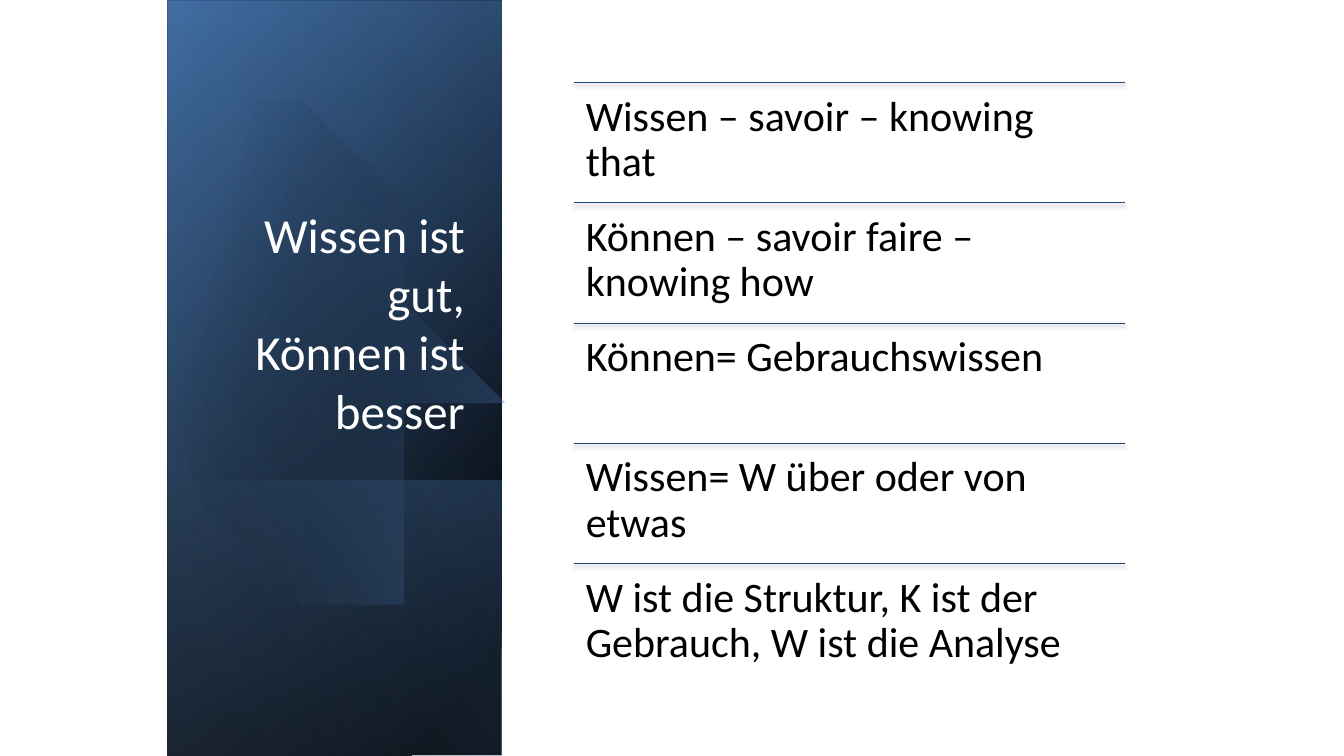
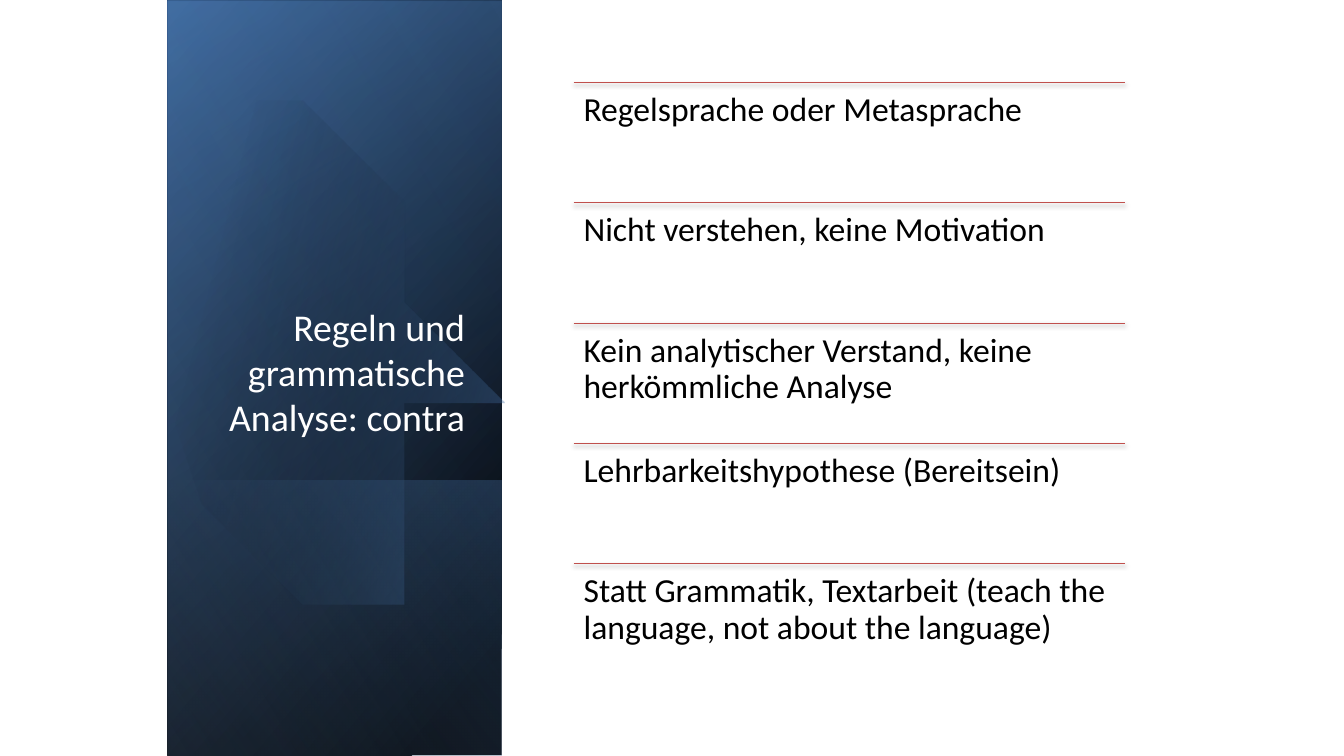
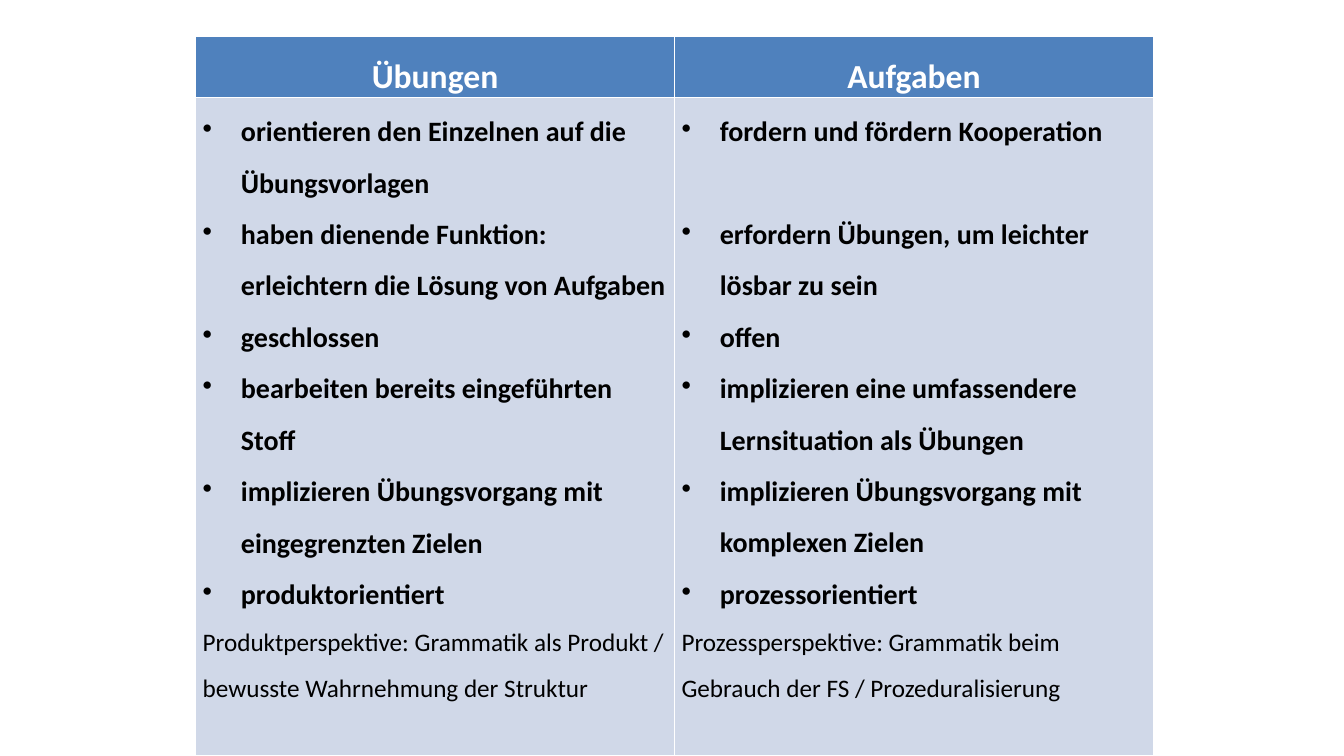
from pptx import Presentation
from pptx.dml.color import RGBColor
from pptx.enum.shapes import MSO_CONNECTOR, MSO_SHAPE
from pptx.enum.text import MSO_ANCHOR, PP_ALIGN
from pptx.oxml.ns import qn
from pptx.oxml.xmlchemy import OxmlElement
from pptx.util import Inches, Pt

FONT = "Calibri"
COLORS = {
    "black": "000000", "white": "FFFFFF", "navy": "376092", "blue": "4F81BD",
    "sky": "95B3D7", "rule_blue": "1F497D", "rule_red": "C0504D", "cell": "D0D8E8",
}

# Gradient: two (position %, colour, opacity %) stops and a clockwise angle.
BASE = ((8, "black", 100), (100, "navy", 100), 50)
GLOW = ((0, "black", 0), (99, "blue", 46), 30)
FOOT = ((2, "blue", 29), (100, "black", 30), 130)
BLOB = ((29, "black", 0), (100, "blue", 43), 14)
SHEEN = ((0, "black", 0), (99, "sky", 11), 120)

BLOB_START = (2.63, 1.14)
BLOB_SEGMENTS = [  # three points make a curve, one point a straight line
    [(3.38, 1.22), (4.11, 1.92), (4.39, 2.9)],
    [(4.74, 4.12), (4.29, 5.31), (3.38, 5.57)],
    [(2.81, 5.74), (2.2, 5.5), (1.73, 5)],
    [(1.63, 4.88)],
    [(1.41, 1.66)],
    [(1.52, 1.54)],
    [(1.69, 1.37), (1.88, 1.25), (2.11, 1.18)],
    [(2.28, 1.13), (2.46, 1.12), (2.63, 1.14)],
]
CURVE_STEPS = 16

LIST_LEFT, LIST_TOP, LIST_WIDTH, LIST_PITCH = 5.69, 0.82, 5.47, 1.193

KNOWLEDGE = [
    "Wissen – savoir – knowing that",
    "Können – savoir faire – knowing how",
    "Können= Gebrauchswissen",
    "Wissen= W über oder von etwas",
    "W ist die Struktur, K ist der Gebrauch, W ist die Analyse",
]
CONTRA = [
    "Regelsprache oder Metasprache",
    "Nicht verstehen, keine Motivation",
    "Kein analytischer Verstand, keine herkömmliche Analyse",
    "Lehrbarkeitshypothese (Bereitsein)",
    "Statt Grammatik, Textarbeit (teach the language, not about the language)",
]
COMPARISON = [  # heading, bullets, closing line, gap after first bullet (pt)
    ("Übungen", [
        "orientieren den Einzelnen auf die Übungsvorlagen",
        "haben dienende Funktion: erleichtern die Lösung von Aufgaben",
        "geschlossen",
        "bearbeiten bereits eingeführten Stoff",
        "implizieren Übungsvorgang mit eingegrenzten Zielen",
        "produktorientiert",
    ], "Produktperspektive: Grammatik als Produkt / bewusste Wahrnehmung der Struktur", 0),
    ("Aufgaben", [
        "fordern und fördern Kooperation",
        "erfordern Übungen, um leichter lösbar zu sein",
        "offen",
        "implizieren eine umfassendere Lernsituation als Übungen",
        "implizieren Übungsvorgang mit komplexen Zielen",
        "prozessorientiert",
    ], "Prozessperspektive: Grammatik beim Gebrauch der FS / Prozeduralisierung", 36.6),
]


def rgb(name):
    return RGBColor.from_string(COLORS[name])


def add_child(parent, tag, **attributes):
    child = OxmlElement(tag)
    for key, value in attributes.items():
        child.set(key, str(value))
    parent.append(child)
    return child


def style(para, size, color, bold=False):
    font = para.font
    font.name, font.size, font.bold = FONT, Pt(size), bold
    font.color.rgb = rgb(color)


def paint(shape, gradient):
    """Give a shape a see-through gradient, without line or shadow."""
    *stops, angle = gradient
    shape.shadow.inherit = False
    shape.line.fill.background()
    shape.fill.gradient()
    shape.fill.gradient_angle = 360 - angle
    for stop, (position, color, _) in zip(shape.fill.gradient_stops, stops):
        stop.position = position / 100
        stop.color.rgb = rgb(color)
    for element, (_, _, opacity) in zip(shape._element.iter(qn("a:srgbClr")), stops):
        add_child(element, "a:alpha", val=opacity * 1000)


def add_band(page, left, top, width, height, gradient):
    """Add a rectangle that is mirrored and turned by a quarter."""
    band = page.shapes.add_shape(
        MSO_SHAPE.RECTANGLE, Inches(left), Inches(top), Inches(width), Inches(height))
    band.rotation = 90
    band._element.spPr.find(qn("a:xfrm")).set("flipH", "1")
    paint(band, gradient)


def curve_points(start, first, second, end):
    """Points along a cubic curve, without its start."""
    for step in range(1, CURVE_STEPS + 1):
        t = step / CURVE_STEPS
        weights = ((1 - t) ** 3, 3 * t * (1 - t) ** 2, 3 * t * t * (1 - t), t ** 3)
        corners = (start, first, second, end)
        yield tuple(sum(w * c[axis] for w, c in zip(weights, corners)) for axis in (0, 1))


def add_blob(page):
    points = [BLOB_START]
    for segment in BLOB_SEGMENTS:
        points += curve_points(points[-1], *segment) if len(segment) == 3 else segment
    builder = page.shapes.build_freeform(*points[0], scale=Inches(1))
    builder.add_line_segments(points[1:], close=True)
    paint(builder.convert_to_shape(), BLOB)


def add_text(page, text, box, size, color, inset, align=PP_ALIGN.LEFT,
             anchor=MSO_ANCHOR.TOP, spacing=1.0):
    frame = page.shapes.add_textbox(*map(Inches, box)).text_frame
    frame.word_wrap = True
    frame.vertical_anchor = anchor
    frame.margin_left = frame.margin_right = Inches(inset)
    frame.margin_top = frame.margin_bottom = Inches(min(inset, 0.12))
    para = frame.paragraphs[0]
    para.text, para.alignment, para.line_spacing = text, align, spacing
    style(para, size, color)


def add_title_panel(page, title, size):
    add_band(page, -0.43, 2.09, 7.5, 3.31, BASE)
    add_band(page, -0.43, 2.11, 7.5, 3.31, GLOW)
    add_band(page, 1.95, 4.48, 2.74, 3.31, FOOT)
    add_blob(page)
    add_band(page, -0.43, 2.09, 7.5, 3.31, SHEEN)
    add_text(page, title, (2.15, 1.84, 2.56, 2.62), size, "white", 0.1,
             PP_ALIGN.RIGHT, MSO_ANCHOR.BOTTOM)


def add_rule(page, top, color):
    rule = page.shapes.add_connector(
        MSO_CONNECTOR.STRAIGHT, Inches(LIST_LEFT), Inches(top),
        Inches(LIST_LEFT + LIST_WIDTH), Inches(top))
    rule.line.width = Pt(0.75)
    rule.line.color.rgb = rgb(color)
    effects = add_child(rule._element.spPr, "a:effectLst")
    shadow = add_child(effects, "a:outerShdw", blurRad=Pt(3.1), dist=Pt(1.8),
                       dir=90 * 60000, rotWithShape=0)
    add_child(add_child(shadow, "a:srgbClr", val=COLORS["black"]), "a:alpha", val=35000)


def add_ruled_list(page, items, size, color, inset):
    for index, item in enumerate(items):
        top = LIST_TOP + index * LIST_PITCH
        add_rule(page, top, color)
        add_text(page, item, (LIST_LEFT, top, LIST_WIDTH, LIST_PITCH), size, "black",
                 inset, spacing=0.9)


def add_list_page(deck, title, title_size, items, size, color, inset):
    page = add_page(deck)
    add_title_panel(page, title, title_size)
    add_ruled_list(page, items, size, color, inset)


def dress_cell(cell, fill):
    """Set the fill, margins and white borders of a table cell."""
    cell.fill.solid()
    cell.fill.fore_color.rgb = rgb(fill)
    cell.margin_left = cell.margin_right = Inches(0.07)
    cell.margin_top = cell.margin_bottom = 0
    properties = cell._tc.get_or_add_tcPr()
    for index, side in enumerate("LRTB"):
        border = OxmlElement(f"a:ln{side}")
        border.set("w", str(Pt(1)))
        add_child(add_child(border, "a:solidFill"), "a:srgbClr", val=COLORS["white"])
        properties.insert(index, border)


def add_bullet(para):
    properties = para._p.get_or_add_pPr()
    properties.set("marL", str(Inches(0.38)))
    properties.set("indent", str(Inches(-0.38)))
    add_child(properties, "a:buChar", char="•")


def fill_body(cell, bullets, closing, first_gap):
    frame = cell.text_frame
    frame.text = "\n".join([*bullets, closing])
    *points, last = frame.paragraphs
    for para in points:
        para.line_spacing = 1.5
        style(para, 20, "black", bold=True)
        add_bullet(para)
    points[0].space_after = Pt(first_gap)
    last.line_spacing = 1.5
    style(last, 18, "black")


def add_comparison(page):
    table = page.shapes.add_table(
        2, len(COMPARISON), Inches(1.94), Inches(0.36), Inches(9.5), Inches(7.14)).table
    table.horz_banding = False
    table.rows[0].height, table.rows[1].height = Inches(0.61), Inches(6.53)
    for column, (heading, bullets, closing, first_gap) in enumerate(COMPARISON):
        head, body = table.cell(0, column), table.cell(1, column)
        dress_cell(head, "blue")
        dress_cell(body, "cell")
        para = head.text_frame.paragraphs[0]
        para.text, para.alignment, para.line_spacing = heading, PP_ALIGN.CENTER, 1.5
        style(para, 24, "white", bold=True)
        fill_body(body, bullets, closing, first_gap)


def add_page(deck):
    return deck.slides.add_slide(deck.slide_layouts[6])


def main():
    deck = Presentation()
    deck.slide_width, deck.slide_height = Inches(13.33), Inches(7.5)
    add_list_page(deck, "Wissen ist gut, Können ist besser", 35,
                  KNOWLEDGE, 30, "rule_blue", 0.12)
    add_list_page(deck, "Regeln und grammatische Analyse: contra", 27,
                  CONTRA, 24, "rule_red", 0.1)
    add_comparison(add_page(deck))
    deck.save("out.pptx")


if __name__ == "__main__":
    main()
